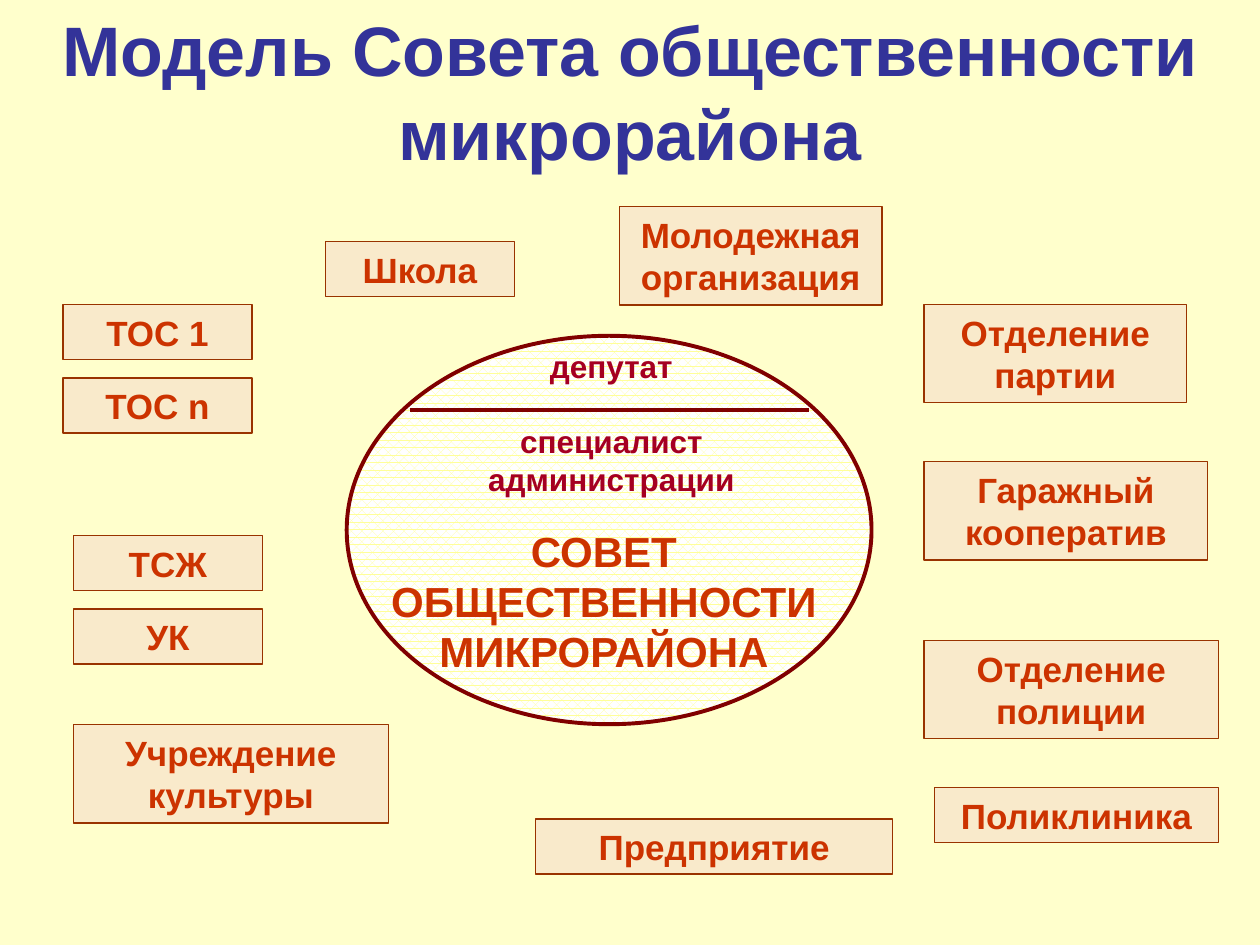
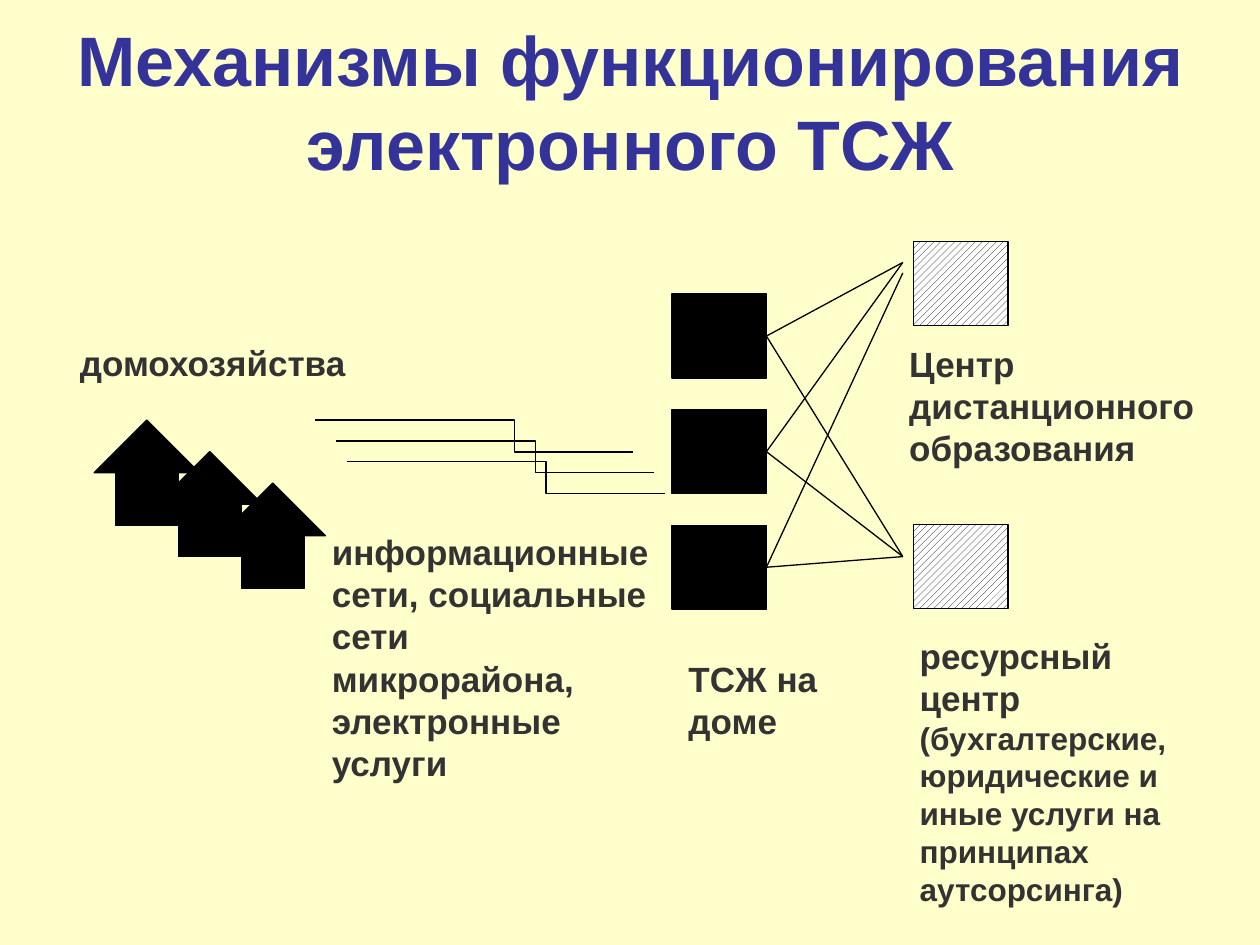
from dataclasses import dataclass

from lxml.etree import SubElement
from pptx import Presentation
from pptx.dml.color import RGBColor
from pptx.enum.dml import MSO_PATTERN as PATTERN
from pptx.enum.shapes import MSO_CONNECTOR, MSO_SHAPE as SHAPE
from pptx.enum.text import MSO_ANCHOR as ANCHOR, MSO_AUTO_SIZE, PP_ALIGN as ALIGN
from pptx.oxml.ns import qn
from pptx.util import Cm, Pt


@dataclass(frozen=True)
class Theme:
    font: str = "Arial"
    page: str = "FFFFCC"
    title: str = "333399"
    accent: str = "CC3300"
    role: str = "A50021"
    label: str = "333333"
    box: str = "F9EACB"
    box_line: str = "993300"
    oval_line: str = "800000"
    oval_dots: str = "FFFF99"
    white: str = "FFFFFF"
    black: str = "000000"
    title_size: int = 40
    council_size: int = 24
    text_size: int = 20
    small_size: int = 18
    thin: float = 0.75
    thick: float = 2.25


T = Theme()
WIDTH, HEIGHT = 25.4, 19.05
TITLE_HEIGHT = 3.63
LABEL_INDENT = 0.76

COUNCIL_TITLE = "Модель Совета общественности микрорайона"
COUNCIL_OVAL = (6.99, 6.77, 10.58, 7.83)
COUNCIL_NAME = ("СОВЕТ ОБЩЕСТВЕННОСТИ МИКРОРАЙОНА", (6.99, 10.46, 10.37, 3.3))
COUNCIL_ROLES = (["депутат", "специалист администрации"], (8.26, 6.86, 7.62, 3.3))
COUNCIL_DIVIDER = ((8.26, 8.26), (16.3, 8.26))
BOX_HEIGHTS = {1: 1.11, 2: 1.98}
MEMBERS = [
    ("ТОС 1", 1, 1.27, 6.14, 3.81),
    ("ТОС n", 1, 1.27, 7.62, 3.81),
    ("ТСЖ", 1, 1.48, 10.8, 3.81),
    ("УК", 1, 1.48, 12.28, 3.81),
    ("Учреждение культуры", 2, 1.48, 14.61, 6.35),
    ("Школа", 1, 6.56, 4.87, 3.81),
    ("Молодежная организация", 2, 12.49, 4.17, 5.29),
    ("Отделение партии", 2, 18.63, 6.14, 5.29),
    ("Гаражный кооператив", 2, 18.63, 9.31, 5.72),
    ("Отделение полиции", 2, 18.63, 12.91, 5.93),
    ("Поликлиника", 1, 18.84, 15.88, 5.72),
    ("Предприятие", 1, 10.8, 16.51, 7.2),
]

NETWORK_TITLE = "Механизмы функционирования электронного ТСЖ"
LABELS = [
    (["домохозяйства"], (0.85, 6.77, 7.62, 1.09)),
    (["информационные сети, социальные сети микрорайона, электронные услуги"],
     (5.93, 10.58, 7.62, 5.33)),
    (["ТСЖ на доме"], (13.12, 13.12, 4.02, 1.96)),
    (["Центр дистанционного образования"], (17.57, 6.77, 7.62, 2.79)),
    (["ресурсный центр",
      "(бухгалтерские, юридические и иные услуги на принципах аутсорсинга)"],
     (17.78, 12.66, 6.56, 5.77)),
]
HOUSES = [(1.9 + 1.27 * i, 8.47 + 0.635 * i) for i in range(3)]
ROOF = (2.12, 1.06)
WALL = (1.27, 1.06)
SQUARE = (1.9, 1.69)
ASSOCIATIONS = [(13.55, 5.93 + 2.33 * i) for i in range(3)]
CENTERS = [(18.42, 4.87), (18.42, 10.58)]
LINK_X = 18.2
LINK_ENDS = [(5.29, 11.22), (5.29, 11.22), (5.5, 11.22)]
NET_STARTS = [(6.35, 8.47), (6.77, 8.89), (6.99, 9.31)]
NET_STEPS = [(4.02, 0), (0, 0.64), (2.4, 0)]


def rgb(value):
    return RGBColor.from_string(value)


def style_text(p, size, color, align):
    p.alignment = align
    f = p.font
    f.name, f.size, f.bold = T.font, Pt(size), True
    f.color.rgb = rgb(color)


def write(sp, texts, sizes, color, align=ALIGN.CENTER, anchor=ANCHOR.MIDDLE, indent=None):
    tf = sp.text_frame
    tf.word_wrap = True
    tf.auto_size = MSO_AUTO_SIZE.NONE
    tf.vertical_anchor = anchor
    if indent is not None:
        tf.margin_left = Cm(indent)
    for i, (text, size) in enumerate(zip(texts, sizes)):
        p = tf.add_paragraph() if i else tf.paragraphs[0]
        p.text = text
        style_text(p, size, color, align)
    return tf


def textbox(slide, box):
    return slide.shapes.add_textbox(*map(Cm, box))


def outline(sp, color, width):
    sp.line.color.rgb = rgb(color)
    sp.line.width = Pt(width)


def shape(shapes, kind, box, fill, line=T.black, width=T.thin):
    sp = shapes.add_shape(kind, *map(Cm, box))
    sp.shadow.inherit = False
    sp.fill.solid()
    sp.fill.fore_color.rgb = rgb(fill)
    outline(sp, line, width)
    return sp


def hatch(sp, pattern, fore):
    sp.fill.patterned()
    sp.fill.pattern = pattern
    sp.fill.fore_color.rgb = rgb(fore)
    sp.fill.back_color.rgb = rgb(T.white)


def connect(slide, start, end, color=T.black, width=T.thin):
    cn = slide.shapes.add_connector(MSO_CONNECTOR.STRAIGHT, *map(Cm, (*start, *end)))
    outline(cn, color, width)
    SubElement(cn._element.spPr, qn("a:effectLst"))


def titled_slide(prs, title, top):
    slide = prs.slides.add_slide(prs.slide_layouts[5])
    sp = slide.shapes.title
    sp.left, sp.top, sp.width, sp.height = map(Cm, (0, top, WIDTH, TITLE_HEIGHT))
    write(sp, [title], [T.title_size], T.title, anchor=ANCHOR.TOP)
    return slide


def council_slide(prs):
    slide = titled_slide(prs, COUNCIL_TITLE, 0)
    oval = shape(slide.shapes, SHAPE.OVAL, COUNCIL_OVAL, T.white, T.oval_line, T.thick)
    hatch(oval, PATTERN.PERCENT_60, T.oval_dots)
    name, box = COUNCIL_NAME
    write(textbox(slide, box), [name], [T.council_size], T.accent, anchor=ANCHOR.TOP)
    for member, lines, left, top, width in MEMBERS:
        box = (left, top, width, BOX_HEIGHTS[lines])
        sp = shape(slide.shapes, SHAPE.RECTANGLE, box, T.box, T.box_line)
        write(sp, [member], [T.text_size], T.accent)
    roles, box = COUNCIL_ROLES
    tf = write(textbox(slide, box), roles, [T.small_size] * 2, T.role, indent=LABEL_INDENT)
    tf.paragraphs[1].space_before = Pt(21.6)
    connect(slide, *COUNCIL_DIVIDER, T.oval_line, T.thick)


def house(slide, left, top):
    group = slide.shapes.add_group_shape()
    wall_left = left + (ROOF[0] - WALL[0]) / 2
    shape(group.shapes, SHAPE.ISOSCELES_TRIANGLE, (left, top, *ROOF), T.black)
    shape(group.shapes, SHAPE.RECTANGLE, (wall_left, top + ROOF[1], *WALL), T.black)


def net_line(slide, x, y):
    points = []
    builder = slide.shapes.build_freeform(Cm(x), Cm(y))
    for dx, dy in NET_STEPS:
        x, y = x + dx, y + dy
        points.append((Cm(x), Cm(y)))
    builder.add_line_segments(points, close=False)
    sp = builder.convert_to_shape()
    sp.shadow.inherit = False
    sp.fill.background()
    outline(sp, T.black, T.thin)


def network_slide(prs):
    slide = titled_slide(prs, NETWORK_TITLE, 0.21)
    for left, top in HOUSES:
        house(slide, left, top)
    for texts, box in LABELS:
        write(textbox(slide, box), texts, [T.text_size, T.small_size], T.label,
              ALIGN.LEFT, indent=LABEL_INDENT)
    for (left, top), ends in zip(ASSOCIATIONS, LINK_ENDS):
        shape(slide.shapes, SHAPE.RECTANGLE, (left, top, *SQUARE), T.black)
        for end in ends:
            connect(slide, (left + SQUARE[0], top + SQUARE[1] / 2), (LINK_X, end))
    for corner in CENTERS:
        sp = shape(slide.shapes, SHAPE.RECTANGLE, (*corner, *SQUARE), T.white)
        hatch(sp, PATTERN.WIDE_UPWARD_DIAGONAL, T.black)
    for start in NET_STARTS:
        net_line(slide, *start)


def main():
    prs = Presentation()
    prs.slide_width, prs.slide_height = Cm(WIDTH), Cm(HEIGHT)
    fill = prs.slide_master.background.fill
    fill.solid()
    fill.fore_color.rgb = rgb(T.page)
    council_slide(prs)
    network_slide(prs)
    prs.save("out.pptx")


if __name__ == "__main__":
    main()
